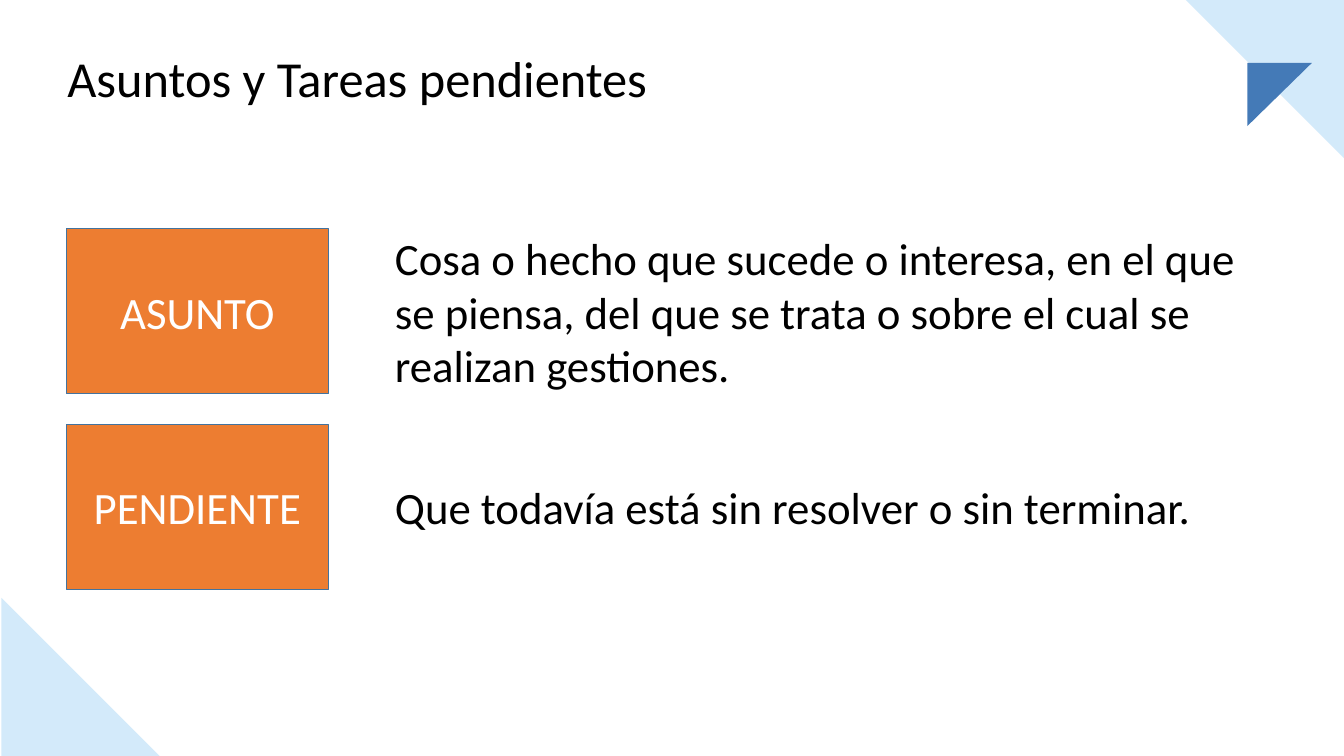
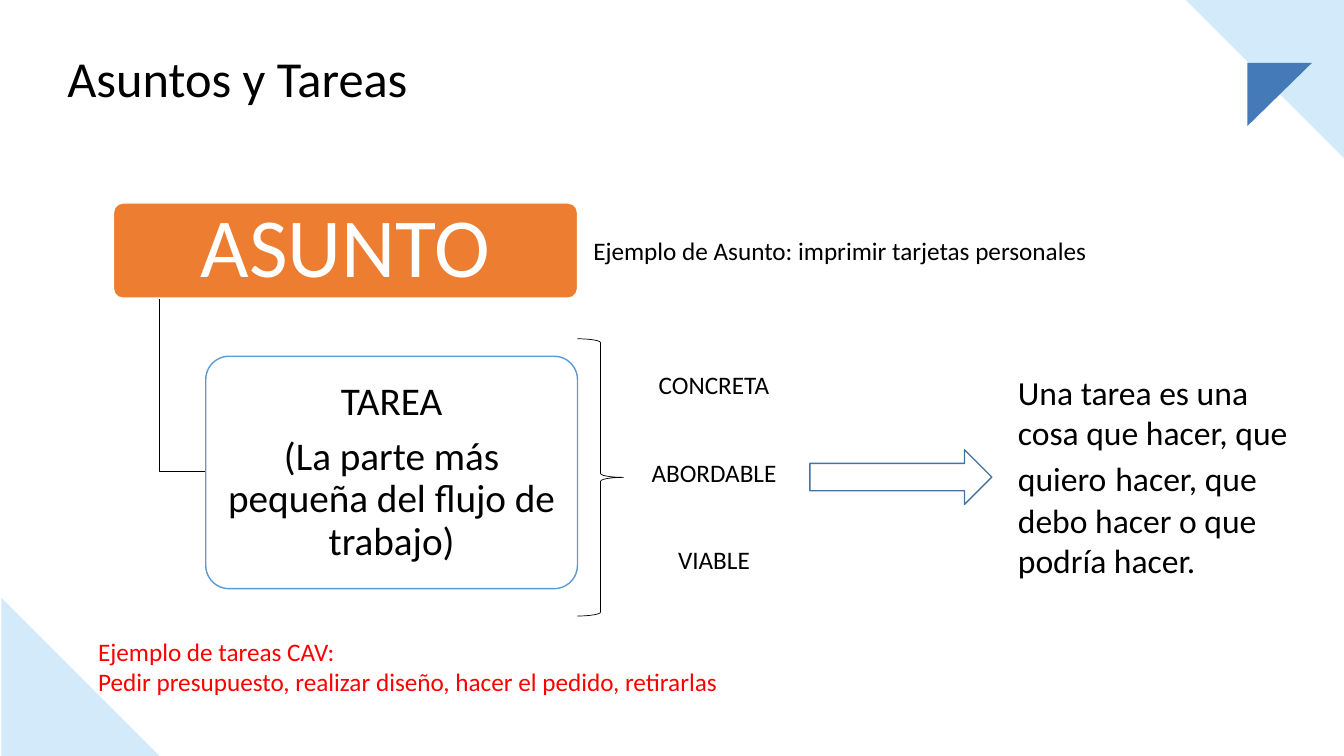
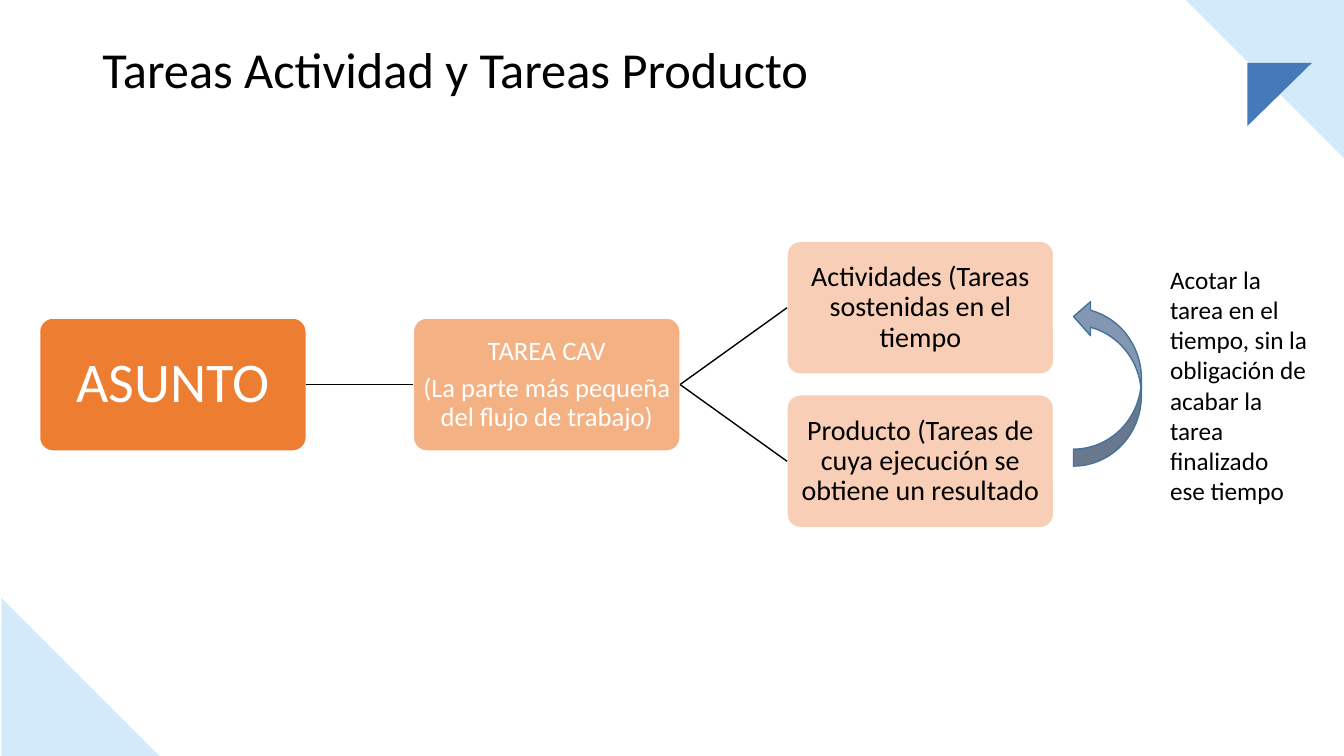
"""Build three slides on matters (asuntos) and tasks (tareas)."""
from lxml import etree
from pptx import Presentation
from pptx.dml.color import RGBColor
from pptx.enum.shapes import MSO_CONNECTOR, MSO_SHAPE
from pptx.enum.text import MSO_ANCHOR, PP_ALIGN
from pptx.oxml.ns import qn
from pptx.util import Pt

RECTANGLE = MSO_SHAPE.RECTANGLE
ROUNDED = MSO_SHAPE.ROUNDED_RECTANGLE
RIGHT_ARROW = MSO_SHAPE.RIGHT_ARROW
RIGHT_BRACE = MSO_SHAPE.RIGHT_BRACE
CURVED_ARROW = MSO_SHAPE.CURVED_LEFT_ARROW
STRAIGHT = MSO_CONNECTOR.STRAIGHT
MIDDLE, TOP = MSO_ANCHOR.MIDDLE, MSO_ANCHOR.TOP
LEFT, CENTER = PP_ALIGN.LEFT, PP_ALIGN.CENTER

FONT = "Calibri"
BLACK, WHITE, RED = "000000", "FFFFFF", "FF0000"
ORANGE, LIGHT_ORANGE, PALE_ORANGE = "ED7D31", "F4B183", "F8CFB6"
PALE_BLUE, BLUE, EDGE_BLUE, TASK_BLUE = "D3EAFA", "447AB7", "43739E", "5B9BD5"
GREY_BLUE = "8497B0"
ROUNDING = 0.1

CORNERS = [
    (PALE_BLUE, [(847, 0), (960, 0), (960, 113)]),
    (BLUE, [(891, 90), (891, 45), (937, 45)]),
    (PALE_BLUE, [(114, 540), (1, 540), (1, 427)]),
]
TITLES = [
    ("Asuntos y Tareas pendientes", 41, 35.3, 541.4, 50.4),
    ("Asuntos y Tareas", 41, 35.3, 541.4, 50.4),
    ("Tareas Actividad y Tareas Producto", 66, 28.8, 828, 104.4),
]


def paint(shape, fill=None, line=None, width=1):
    """Set the fill and outline of a shape; None leaves either out."""
    shape.shadow.inherit = False
    for part, colour in ((shape.fill, fill), (shape.line.fill, line)):
        if colour:
            part.solid()
            part.fore_color.rgb = RGBColor.from_string(colour)
        else:
            part.background()
    if line:
        shape.line.width = Pt(width)


def write(shape, text, size, colour=BLACK, align=LEFT, anchor=TOP, spacing=1, gap=0, margin=None):
    """Write one paragraph for each line of text."""
    frame = shape.text_frame
    frame.text = text
    frame.word_wrap = True
    frame.vertical_anchor = anchor
    if margin is not None:
        frame.margin_left = frame.margin_right = Pt(margin)
        frame.margin_top = frame.margin_bottom = Pt(margin)
    for index, paragraph in enumerate(frame.paragraphs):
        paragraph.alignment = align
        paragraph.line_spacing = spacing
        paragraph.space_before = Pt(gap if index else 0)
        paragraph.font.name = FONT
        paragraph.font.size = Pt(size)
        paragraph.font.color.rgb = RGBColor.from_string(colour)


deck = Presentation()
deck.slide_width, deck.slide_height = Pt(960), Pt(540)

canvases = []
for title, *frame in TITLES:
    canvas = deck.slides.add_slide(deck.slide_layouts[6]).shapes
    for colour, points in CORNERS:
        outline = canvas.build_freeform(*points[0], scale=Pt(1))
        outline.add_line_segments(points[1:])
        paint(outline.convert_to_shape(), colour)
    write(canvas.add_textbox(*map(Pt, frame)), title, 36, spacing=0.9)
    canvases.append(canvas)
definitions, breakdown, task_types = canvases

DEFINITIONS = [
    ("ASUNTO", "Cosa o hecho que sucede o interesa, en el que se piensa, "
               "del que se trata o sobre el cual se realizan gestiones."),
    ("PENDIENTE", "Que todavía está sin resolver o sin terminar."),
]
for row, (term, meaning) in enumerate(DEFINITIONS):
    top = Pt(163.3 + 139.8 * row)
    term_box = definitions.add_shape(RECTANGLE, Pt(47.5), top, Pt(187), Pt(118))
    paint(term_box, ORANGE, EDGE_BLUE)
    write(term_box, term, 32, WHITE, CENTER, MIDDLE)
    meaning_box = definitions.add_textbox(Pt(275), top, Pt(635), Pt(118))
    write(meaning_box, meaning, 32, anchor=MIDDLE)

branch = breakdown.build_freeform(114, 213, scale=Pt(1))
branch.add_line_segments([(114, 337), (147, 337)], close=False)
paint(branch.convert_to_shape(), line=BLACK)

SMALLEST_PART = "(La parte más pequeña del flujo de trabajo)"
NODES = [
    (breakdown, "ASUNTO", (81, 145, 331.5, 68), 60, ORANGE, WHITE, WHITE, 4),
    (breakdown, "TAREA\n" + SMALLEST_PART, (147, 254.5, 265.5, 166), 28,
     WHITE, TASK_BLUE, BLACK, 4),
    (task_types, "ASUNTO", (28.3, 227.2, 190.5, 95), 40, ORANGE, WHITE, WHITE, 2),
    (task_types, "TAREA CAV\n" + SMALLEST_PART, (295.3, 227.2, 190.5, 95), 19,
     LIGHT_ORANGE, WHITE, WHITE, 0.8),
    (task_types, "Actividades (Tareas sostenidas en el tiempo",
     (562.2, 172.3, 190.5, 95), 20, PALE_ORANGE, WHITE, BLACK, 0.8),
    (task_types, "Producto (Tareas de cuya ejecución se obtiene un resultado",
     (562.2, 282, 190.5, 95), 20, PALE_ORANGE, WHITE, BLACK, 0.8),
]
for canvas, text, frame, size, fill, line, colour, margin in NODES:
    node = canvas.add_shape(ROUNDED, *map(Pt, frame))
    node.adjustments[0] = ROUNDING
    paint(node, fill, line)
    write(node, text, size, colour, CENTER, MIDDLE, 0.9, size * 0.33, margin)

brace = breakdown.add_shape(RIGHT_BRACE, Pt(412.5), Pt(242), Pt(33), Pt(198))
paint(brace, line=BLACK, width=0.5)
for row, quality in enumerate(["CONCRETA", "ABORDABLE", "VIABLE"]):
    quality_box = breakdown.add_textbox(Pt(453), Pt(260.6 + 62.2 * row), Pt(114), Pt(29))
    write(quality_box, quality, 18, align=CENTER)
conclusion_arrow = breakdown.add_shape(RIGHT_ARROW, Pt(578.5), Pt(321.3), Pt(130), Pt(39))
paint(conclusion_arrow, WHITE, EDGE_BLUE)

conclusion = breakdown.add_textbox(Pt(720), Pt(262), Pt(215), Pt(158))
write(conclusion, "Una tarea es una cosa que hacer, que quiero", 24)
sentence = conclusion.text_frame.paragraphs[0]
wide_space = sentence.add_run()
wide_space.text = " "
wide_space.font.size = Pt(28)
sentence.add_run().text = "hacer, que debo hacer o que podría hacer."

matter_example = breakdown.add_textbox(Pt(416.7), Pt(164.3), Pt(397), Pt(29))
write(matter_example, "Ejemplo de Asunto: imprimir tarjetas personales", 18)
task_example = breakdown.add_textbox(Pt(63), Pt(450.7), Pt(593), Pt(51))
write(task_example, "Ejemplo de tareas CAV:\n"
      "Pedir presupuesto, realizar diseño, hacer el pedido, retirarlas", 18, RED)

LINKS = [
    (218.8, 274.7, 295.3, 274.7),
    (485.8, 274.7, 562.2, 219.8),
    (485.8, 274.7, 562.2, 329.5),
]
for ends in LINKS:
    link = task_types.add_connector(STRAIGHT, *map(Pt, ends))
    link.line.color.rgb = RGBColor.from_string(BLACK)
    link.line.width = Pt(1)
    etree.SubElement(link._element.spPr, qn("a:effectLst"))

return_arrow = task_types.add_shape(CURVED_ARROW, Pt(766.8), Pt(214), Pt(48.5), Pt(119))
return_arrow._element.spPr.get_or_add_xfrm().set("flipV", "1")
paint(return_arrow, GREY_BLUE, EDGE_BLUE)
time_limit = task_types.add_textbox(Pt(828.7), Pt(185), Pt(113), Pt(204))
write(time_limit, "Acotar la tarea en el tiempo, sin la obligación de acabar "
      "la tarea finalizado ese tiempo", 18)

deck.save("out.pptx")
